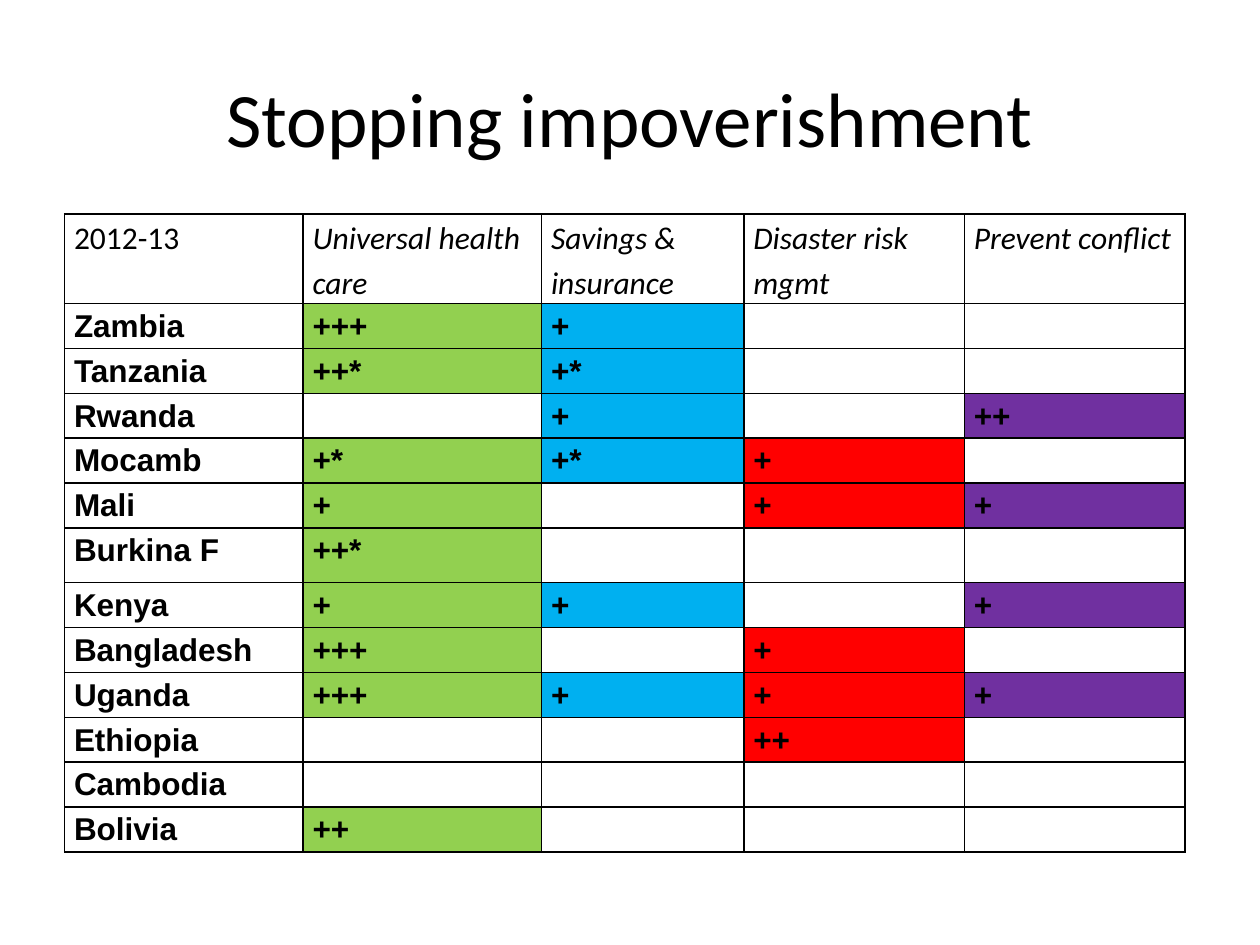
from typing import NamedTuple

from lxml import etree
from pptx import Presentation
from pptx.dml.color import RGBColor
from pptx.enum.text import MSO_ANCHOR, PP_ALIGN
from pptx.oxml.ns import qn
from pptx.util import Pt

LEFT, CENTER = PP_ALIGN.LEFT, PP_ALIGN.CENTER
MIDDLE = MSO_ANCHOR.MIDDLE
BLANK_LAYOUT = 6

BLACK = "000000"
ROW_HEIGHT = 25.65
HEADER_HEIGHT = 51.1
TALL_ROWS = {"Burkina F": 31.4}
CELL_INSET = 5.4


class Column(NamedTuple):
    heading: str
    width: float
    fill: str | None = None


class Country(NamedTuple):
    name: str
    health: str = ""
    savings: str = ""
    disaster: str = ""
    conflict: str = ""


COLUMNS = [
    Column("2012-13", 136.3),
    Column("Universal health care", 136.3),
    Column("Savings & insurance", 115.6),
    Column("Disaster risk mgmt", 126),
    Column("Prevent conflict", 126),
]

COUNTRIES = [
    Country("Zambia", health="+++", savings="+"),
    Country("Tanzania", health="++*", savings="+*"),
    Country("Rwanda", savings="+", conflict="++"),
    Country("Mocamb", health="+*", savings="+*", disaster="+"),
    Country("Mali", health="+", disaster="+", conflict="+"),
    Country("Burkina F", health="++*"),
    Country("Kenya", health="+", savings="+", conflict="+"),
    Country("Bangladesh", health="+++", disaster="+"),
    Country("Uganda", health="+++", savings="+", disaster="+", conflict="+"),
    Country("Ethiopia", disaster="++"),
    Country("Cambodia"),
    Country("Bolivia", health="++"),
]

SCORE_FILLS = [None, "92D050", "00B0F0", "FF0000", "7030A0"]


def color(value: str) -> RGBColor:
    return RGBColor.from_string(value)


def write_text(text_frame, text: str, *, font: str = "Calibri", size: float = 18,
               bold: bool = False, italic: bool = False, align=LEFT,
               line_spacing: float = 1.0) -> None:
    text_frame.word_wrap = True
    paragraph = text_frame.paragraphs[0]
    paragraph.alignment = align
    paragraph.line_spacing = line_spacing
    run = paragraph.add_run()
    run.text = text
    run.font.name = font
    run.font.size = Pt(size)
    run.font.bold = bold
    run.font.italic = italic
    run.font.color.rgb = color(BLACK)


def add_borders(cell, width: float = 1) -> None:
    properties = cell._tc.get_or_add_tcPr()
    for side in ("a:lnL", "a:lnR", "a:lnT", "a:lnB"):
        line = etree.SubElement(properties, qn(side), w=str(Pt(width)))
        fill = etree.SubElement(line, qn("a:solidFill"))
        etree.SubElement(fill, qn("a:srgbClr"), val=BLACK)


def format_cell(cell, text: str, *, fill: str | None = None, **text_format) -> None:
    """Set borders, insets and fill, and write the text if there is any."""
    add_borders(cell)
    cell.margin_left = cell.margin_right = Pt(CELL_INSET)
    cell.margin_top = cell.margin_bottom = 0
    if fill and text:
        cell.fill.solid()
        cell.fill.fore_color.rgb = color(fill)
    else:
        cell.fill.background()
    if text:
        write_text(cell.text_frame, text, line_spacing=1.15, **text_format)


def add_title(slide, text: str) -> None:
    title = slide.shapes.add_textbox(Pt(36), Pt(21.6), Pt(648), Pt(90))
    title.text_frame.vertical_anchor = MIDDLE
    write_text(title.text_frame, text, size=44, align=CENTER)


def add_score_table(slide) -> None:
    heights = [HEADER_HEIGHT] + [
        TALL_ROWS.get(country.name, ROW_HEIGHT) for country in COUNTRIES]
    width = sum(column.width for column in COLUMNS)
    table = slide.shapes.add_table(len(heights), len(COLUMNS), Pt(36.9), Pt(122.4),
                                   Pt(width), Pt(sum(heights))).table
    table.first_row = table.horz_banding = False

    for row, height in zip(table.rows, heights):
        row.height = Pt(height)
    for index, column in enumerate(COLUMNS):
        table.columns[index].width = Pt(column.width)
        format_cell(table.cell(0, index), column.heading, italic=index > 0)
    for row_index, country in enumerate(COUNTRIES, start=1):
        for index, (text, fill) in enumerate(zip(country, SCORE_FILLS)):
            format_cell(table.cell(row_index, index), text, fill=fill,
                        font="Arial", bold=True)


def main() -> None:
    presentation = Presentation()
    presentation.slide_width, presentation.slide_height = Pt(720), Pt(540)
    slide = presentation.slides.add_slide(presentation.slide_layouts[BLANK_LAYOUT])
    add_title(slide, "Stopping impoverishment")
    add_score_table(slide)
    presentation.save("out.pptx")


if __name__ == "__main__":
    main()
